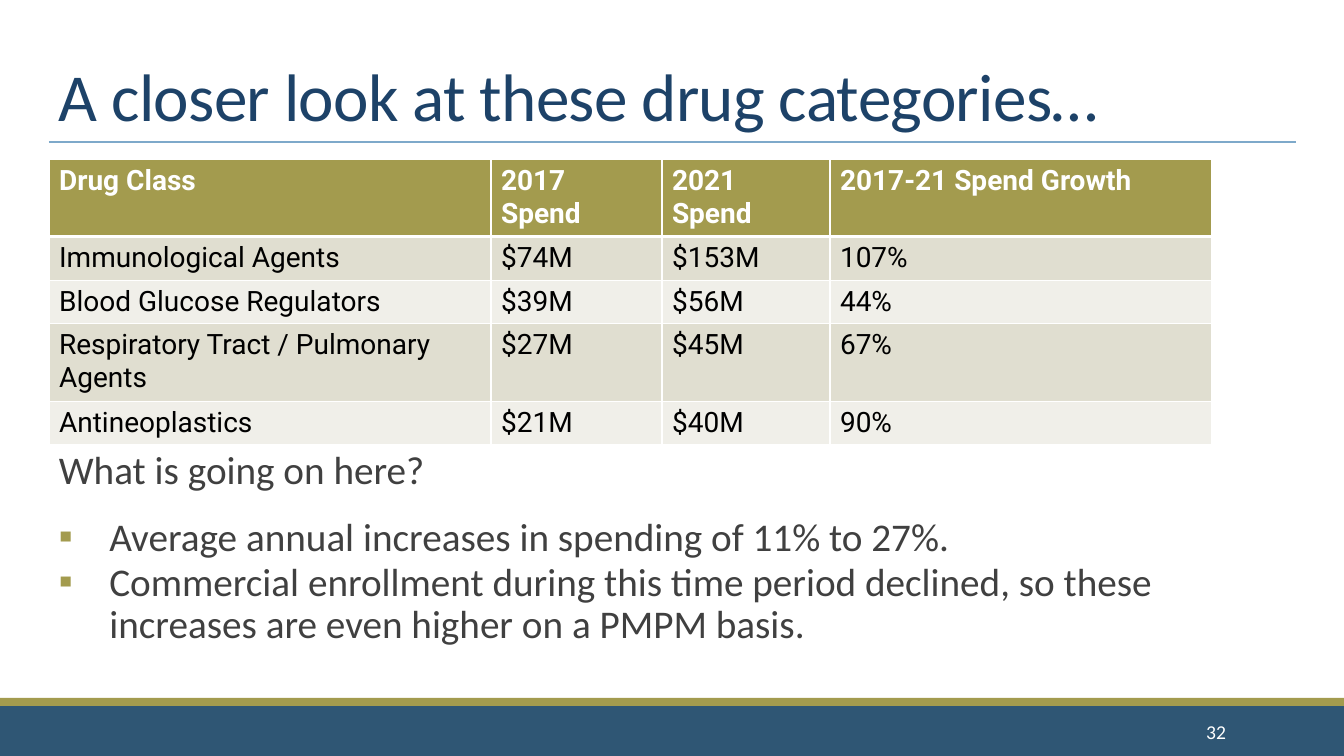
from lxml import etree
from pptx import Presentation, util as u
from pptx.dml.color import RGBColor
from pptx.enum import shapes, text
from pptx.oxml import parse_xml
from pptx.oxml.ns import qn

PX = 914400 / 100.8
COLORS = {
    "navy": "2F5674", "olive": "A39B4E", "rule": "7EA9CA", "title": "1D4268",
    "body": "404040", "white": "FFFFFF", "black": "000000",
    "band_dark": "E0DED0", "band_light": "F0EFE9",
}
DRAWING_NS = "http://schemas.openxmlformats.org/drawingml/2006/main"


def px(*lengths):
    """Turn pixel lengths into EMU."""
    return [u.Emu(round(length * PX)) for length in lengths]


def write(paragraph, words, font, size, color, bold=False):
    run = paragraph.add_run()
    run.text = words
    run.font.color.rgb = RGBColor.from_string(COLORS[color])
    for name, value in {"name": font, "size": u.Pt(size), "bold": bold}.items():
        setattr(run.font, name, value)
    return run


prs = Presentation()
prs.slide_width, prs.slide_height = px(1344, 756)
slide = prs.slides.add_slide(prs.slide_layouts[6])

# Footer bands and title rule
for top, height, color in [(706, 50, "navy"), (698, 8, "olive")]:
    band = slide.shapes.add_shape(shapes.MSO_SHAPE.RECTANGLE, *px(0, top, 1344, height))
    band.shadow.inherit = False
    band.fill.solid()
    band.fill.fore_color.rgb = RGBColor.from_string(COLORS[color])
    band.line.fill.background()

rule = slide.shapes.add_connector(shapes.MSO_CONNECTOR.STRAIGHT, *px(49, 142, 1296, 142))
rule.line.color.rgb = RGBColor.from_string(COLORS["rule"])
rule.line.width = u.Pt(1)
etree.SubElement(rule.element.spPr, qn("a:effectLst"))

# Title
title = slide.shapes.add_textbox(*px(49, 31, 1247, 109)).text_frame
title.word_wrap = True
title.vertical_anchor = text.MSO_ANCHOR.BOTTOM
heading = title.paragraphs[0]
heading.line_spacing = 0.85
heading_run = write(heading, "A closer look at these drug categories…", "Calibri", 48, "title")
heading_run.font._element.set("spc", "-50")

# Spending table
spending = [
    ("Drug Class", "2017 Spend", "2021 Spend", "2017-21 Spend Growth"),
    ("Immunological Agents", "$74M", "$153M", "107%"),
    ("Blood Glucose Regulators", "$39M", "$56M", "44%"),
    ("Respiratory Tract / Pulmonary Agents", "$27M", "$45M", "67%"),
    ("Antineoplastics", "$21M", "$40M", "90%"),
]
column_widths = px(442, 171, 168, 382)
table = slide.shapes.add_table(len(spending), 4, *px(49, 159, 1163, 205)).table
for column, width in zip(table.columns, column_widths):
    column.width = width
for r, row in enumerate(spending):
    is_header = r == 0
    fill = "olive" if is_header else "band_dark" if r % 2 else "band_light"
    borders = {"lnL": 1, "lnR": 1, "lnT": 3 if r == 1 else 1, "lnB": 3 if is_header else 1}
    for c, words in enumerate(row):
        cell = table.cell(r, c)
        cell.fill.solid()
        cell.fill.fore_color.rgb = RGBColor.from_string(COLORS[fill])
        write(cell.text_frame.paragraphs[0], words, "Roboto", 20,
              "white" if is_header else "black", is_header)
        for position, (side, points) in enumerate(borders.items()):
            cell._tc.get_or_add_tcPr().insert(position, parse_xml(
                f'<a:{side} xmlns:a="{DRAWING_NS}" w="{u.Pt(points)}"><a:solidFill>'
                f'<a:srgbClr val="{COLORS["white"]}"/></a:solidFill></a:{side}>'))

# Slide number
number = slide.shapes.add_textbox(*px(1092, 712, 144, 40)).text_frame
number.word_wrap = True
number.vertical_anchor = text.MSO_ANCHOR.MIDDLE
number.paragraphs[0].alignment = text.PP_ALIGN.RIGHT
write(number.paragraphs[0], "32", "Calibri", 14, "white")

# Commentary
commentary = slide.shapes.add_textbox(*px(49, 440, 1164, 214)).text_frame
commentary.word_wrap = True
commentary.auto_size = text.MSO_AUTO_SIZE.SHAPE_TO_FIT_TEXT
question = commentary.paragraphs[0]
question.space_after = u.Pt(6)
write(question, "What is going on here?", "Calibri", 28, "body")
findings = [
    ("Average annual increases in spending of 11% to 27%.", 12),
    ("Commercial enrollment during this time period declined, so these "
     "increases are even higher on a PMPM basis.", 0),
]
for words, space_before in findings:
    finding = commentary.add_paragraph()
    finding.line_spacing = 0.9
    finding.space_before = u.Pt(space_before)
    finding.space_after = u.Pt(2)
    write(finding, words, "Calibri", 28, "body")
    props = finding._p.get_or_add_pPr()
    props.set("marL", str(u.Inches(0.5)))
    props.set("indent", str(u.Inches(-0.5)))
    bullet_color = etree.SubElement(props, qn("a:buClr"))
    etree.SubElement(bullet_color, qn("a:srgbClr"), val=COLORS["olive"])
    etree.SubElement(props, qn("a:buFont"), typeface="Calibri")
    etree.SubElement(props, qn("a:buChar"), char="▪")

prs.save("out.pptx")
